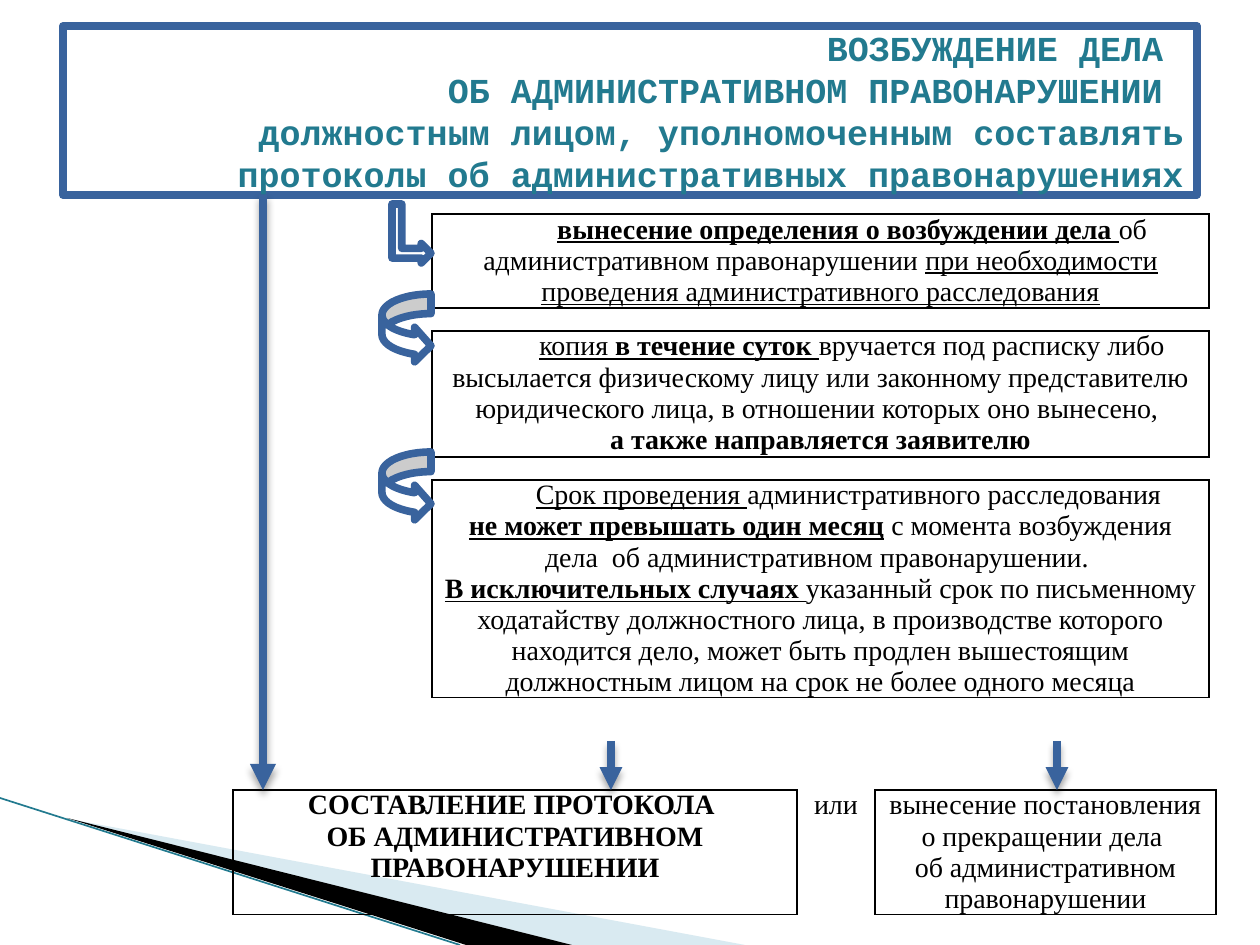
from copy import deepcopy
from typing import NamedTuple

from lxml import etree
from pptx import Presentation
from pptx import util as u
from pptx.dml.color import RGBColor
from pptx.enum import shapes, text
from pptx.oxml import parse_xml
from pptx.oxml.ns import nsdecls, qn

PX = 914400 / 126

BLUE = RGBColor(0x39, 0x63, 0x9D)
TEAL = RGBColor(0x22, 0x7A, 0x8F)
PALE = RGBColor(0xA0, 0xCB, 0xDC)
BLACK = RGBColor(0, 0, 0)
WHITE = RGBColor(255, 255, 255)

SERIF = "Times New Roman"
MONO = "Courier New"
LINE_PT = 4.33


class Run(NamedTuple):
    text: str
    bold: bool = False
    underline: bool = False


class Cell(NamedTuple):
    runs: tuple[Run, ...] = ()
    borders: str = "LRTB"


class Grid(NamedTuple):
    x: int
    y: int
    cols: tuple[int, ...]
    rows: tuple[int, ...]
    cells: tuple[tuple[Cell, ...], ...]
    margin: int
    indent: int = 0


class Marker(NamedTuple):
    kind: shapes.MSO_SHAPE
    x: int
    y: int
    w: int
    h: int
    rotation: int = 0
    adjustments: tuple[float, ...] = ()


class Arrow(NamedTuple):
    x: int
    top: int
    bottom: int
    width: float = LINE_PT


class Wedge(NamedTuple):
    points: tuple[tuple[int, int], ...]
    color: RGBColor
    alpha: int = 100


TITLE = (
    "ВОЗБУЖДЕНИЕ ДЕЛА \nОБ АДМИНИСТРАТИВНОМ ПРАВОНАРУШЕНИИ \n"
    "должностным лицом, уполномоченным составлять протоколы об административных правонарушениях"
)

GAP = (Cell(borders="TB"),)
STEPS = Grid(432, 214, (777,), (94, 23, 126, 23, 217), (
    (Cell((
        Run("вынесение определения о возбуждении дела ", True, True),
        Run("об административном правонарушении "),
        Run("при необходимости проведения административного расследования", False, True),
    )),),
    GAP,
    (Cell((
        Run("копия ", False, True),
        Run("в течение суток ", True, True),
        Run("вручается под расписку либо высылается физическому лицу или законному "
            "представителю юридического лица, в отношении которых оно вынесено, \n"),
        Run("а также направляется заявителю", True),
    )),),
    GAP,
    (Cell((
        Run("Срок проведения ", False, True),
        Run("административного расследования \n"),
        Run("не может превышать один месяц", True, True),
        Run(" с момента возбуждения дела  об административном правонарушении. \n"),
        Run("В исключительных случаях ", True, True),
        Run("указанный срок по письменному ходатайству должностного лица, в производстве "
            "которого находится дело, может быть продлен вышестоящим должностным лицом "
            "на срок не более одного месяца"),
    )),),
), margin=8, indent=63)

OUTCOMES = Grid(233, 790, (564, 78, 341), (124,), ((
    Cell((Run("СОСТАВЛЕНИЕ ПРОТОКОЛА \nОБ АДМИНИСТРАТИВНОМ ПРАВОНАРУШЕНИИ", True),)),
    Cell((Run("или"),), "LR"),
    Cell((Run("вынесение постановления о прекращении дела \n"
              "об административном правонарушении"),)),
),), margin=6)

CURVE = (0.4, 0.8, 0.333)
MARKERS = (
    Marker(shapes.MSO_SHAPE.CURVED_RIGHT_ARROW, 382, 294, 49, 69, 0, CURVE),
    Marker(shapes.MSO_SHAPE.CURVED_RIGHT_ARROW, 382, 452, 49, 69, 0, CURVE),
    Marker(shapes.MSO_SHAPE.BENT_UP_ARROW, 382, 214, 59, 39, 90),
)
ARROWS = (Arrow(611, 741, 790), Arrow(1057, 741, 790), Arrow(263, 195, 790, 5))
WEDGES = (
    Wedge(((69, 819), (745, 945), (572, 945)), PALE, 40),
    Wedge(((67, 818), (572, 945), (466, 945)), BLACK),
)


def px(n: int) -> u.Emu:
    return u.Emu(round(n * PX))


def style_shape(sp, fill: RGBColor) -> None:
    sp.shadow.inherit = False
    sp.fill.solid()
    sp.fill.fore_color.rgb = fill
    sp.line.color.rgb = BLUE
    sp.line.width = u.Pt(LINE_PT)


def style_font(font, name: str, size: int, color: RGBColor, bold: bool) -> None:
    font.name, font.size, font.bold = name, u.Pt(size), bold
    font.color.rgb = color


def add_run(p, run: Run, name: str, size: int, color: RGBColor) -> None:
    """Add a run; each newline becomes a line break of the same format."""
    for i, part in enumerate(run.text.split("\n")):
        if i:
            p.add_line_break()
            p._p[-1].append(deepcopy(r._r.rPr))
        if part:
            r = p.add_run()
            r.text = part
            style_font(r.font, name, size, color, run.bold)
            r.font.underline = run.underline


def set_borders(cell, sides: str) -> None:
    tc_pr = cell._tc.get_or_add_tcPr()
    for side in "LRTB":
        ln = etree.SubElement(tc_pr, qn(f"a:ln{side}"), w=str(u.Pt(1)))
        if side in sides:
            fill = etree.SubElement(ln, qn("a:solidFill"))
            etree.SubElement(fill, qn("a:srgbClr"), val=str(BLACK))
        else:
            etree.SubElement(ln, qn("a:noFill"))


def fill_cell(cell, content: Cell, grid: Grid) -> None:
    cell.margin_left = cell.margin_right = px(grid.margin)
    cell.margin_top = cell.margin_bottom = 0
    set_borders(cell, content.borders)
    cell.fill.background()
    p = cell.text_frame.paragraphs[0]
    p.alignment = text.PP_ALIGN.CENTER
    p._p.get_or_add_pPr().set("indent", str(px(grid.indent)))
    for run in content.runs:
        add_run(p, run, SERIF, 16, BLACK)
    if not content.runs:
        etree.SubElement(p._p, qn("a:endParaRPr"), sz="800")


def add_grid(s, grid: Grid) -> None:
    table = s.shapes.add_table(len(grid.rows), len(grid.cols), px(grid.x), px(grid.y),
                               px(sum(grid.cols)), px(sum(grid.rows))).table
    table.first_row = table.horz_banding = False
    for column, width in zip(table.columns, grid.cols):
        column.width = px(width)
    for row, height, contents in zip(table.rows, grid.rows, grid.cells):
        row.height = px(height)
        for cell, content in zip(row.cells, contents):
            fill_cell(cell, content, grid)


def add_title(s) -> None:
    sp = s.shapes.add_shape(shapes.MSO_SHAPE.RECTANGLE, px(63), px(26), px(1134), px(169))
    style_shape(sp, WHITE)
    tf = sp.text_frame
    tf.word_wrap = True
    tf.vertical_anchor = text.MSO_ANCHOR.MIDDLE
    p = tf.paragraphs[0]
    p.alignment = text.PP_ALIGN.RIGHT
    add_run(p, Run(TITLE, True), MONO, 20, TEAL)


def add_marker(s, m: Marker) -> None:
    sp = s.shapes.add_shape(m.kind, px(m.x), px(m.y), px(m.w), px(m.h))
    style_shape(sp, WHITE)
    sp.rotation = m.rotation
    for i, value in enumerate(m.adjustments):
        sp.adjustments[i] = value


def add_line(s, x1: int, y1: int, x2: int, y2: int, color: RGBColor, width: float):
    """Add a straight line and return it with its empty effect list."""
    line = s.shapes.add_connector(shapes.MSO_CONNECTOR.STRAIGHT, px(x1), px(y1), px(x2), px(y2))
    line.line.color.rgb = color
    line.line.width = u.Pt(width)
    return line, etree.SubElement(line._element.spPr, qn("a:effectLst"))


def add_arrow(s, a: Arrow) -> None:
    line, effects = add_line(s, a.x, a.top, a.x, a.bottom, BLUE, a.width)
    etree.SubElement(line.line._get_or_add_ln(), qn("a:tailEnd"), type="triangle")
    effects.append(parse_xml(
        f'<a:outerShdw {nsdecls("a")} blurRad="{u.Pt(4)}" dist="{u.Pt(3)}" dir="5400000" '
        f'rotWithShape="0"><a:srgbClr val="{BLACK}"><a:alpha val="35000"/></a:srgbClr></a:outerShdw>'))


def add_wedge(s, w: Wedge) -> None:
    builder = s.shapes.build_freeform(*w.points[0], scale=PX)
    builder.add_line_segments(w.points[1:], close=True)
    sp = builder.convert_to_shape()
    style_shape(sp, w.color)
    sp.line.fill.background()
    if w.alpha < 100:
        color = sp._element.spPr.find(qn("a:solidFill"))[0]
        etree.SubElement(color, qn("a:alpha"), val=str(w.alpha * 1000))


def main() -> None:
    prs = Presentation()
    prs.slide_width, prs.slide_height = px(1260), px(945)
    s = prs.slides.add_slide(prs.slide_layouts[6])
    for wedge in WEDGES:
        add_wedge(s, wedge)
    add_line(s, 0, 798, 460, 945, TEAL, 0.95)
    add_grid(s, STEPS)
    add_title(s)
    add_grid(s, OUTCOMES)
    for marker in MARKERS:
        add_marker(s, marker)
    for arrow in ARROWS:
        add_arrow(s, arrow)
    prs.save("out.pptx")


if __name__ == "__main__":
    main()
